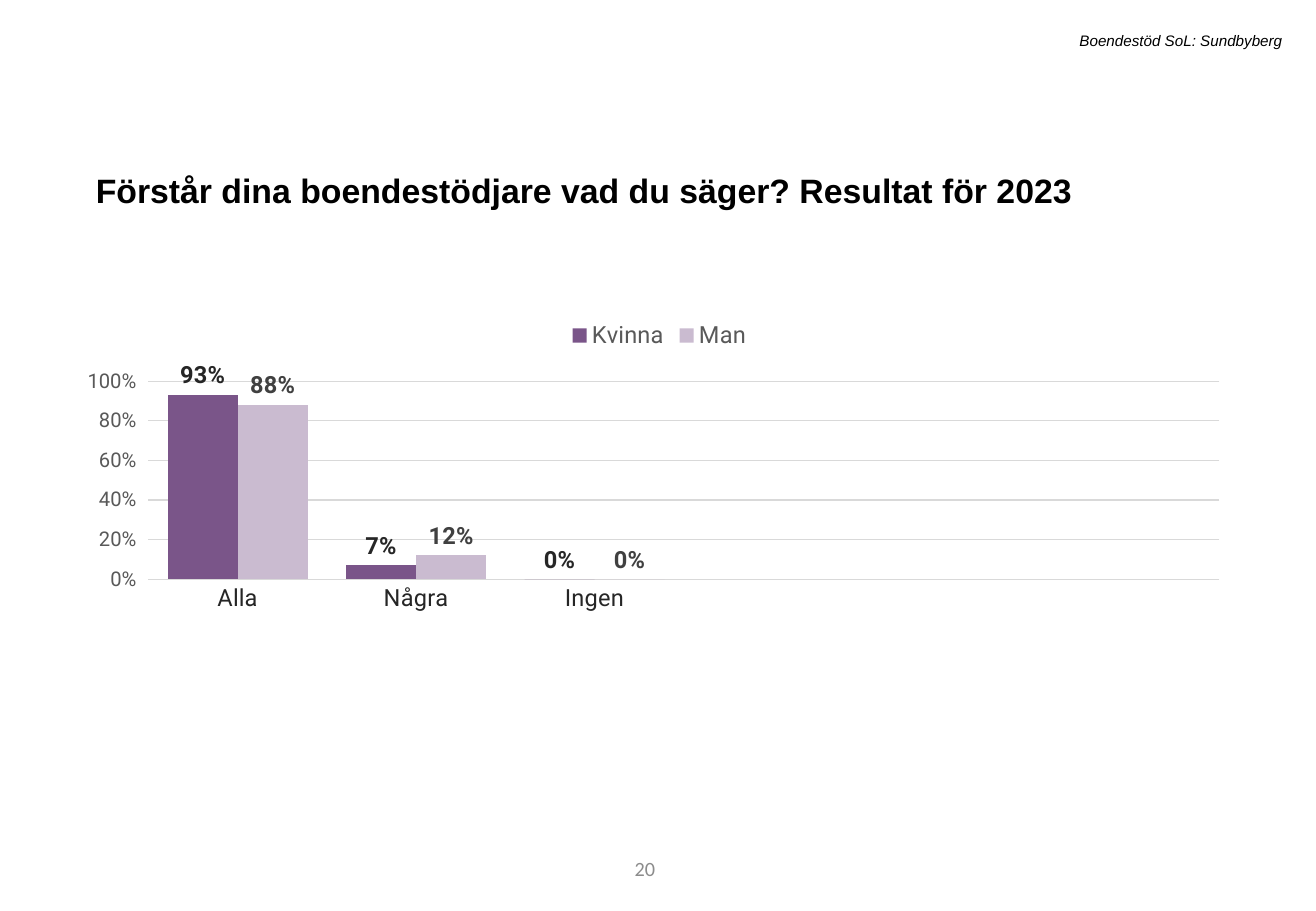
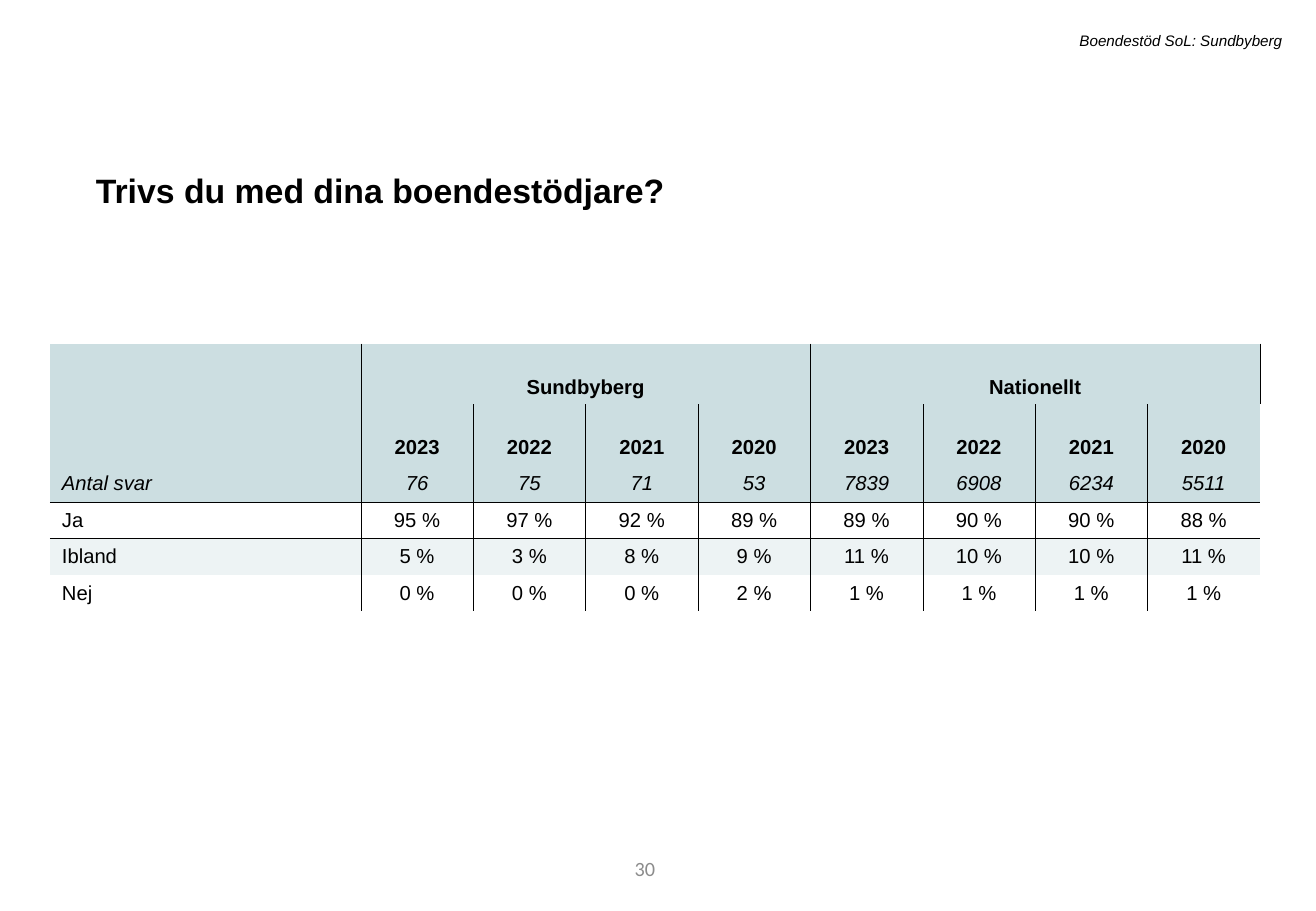
import pptx
import pptx.chart.data
import pptx.dml.color
import pptx.enum.chart
import pptx.enum.text
import pptx.oxml
import pptx.oxml.ns
import pptx.util

Inches = pptx.util.Inches
Pt = pptx.util.Pt
RGB = pptx.dml.color.RGBColor
ALIGN = pptx.enum.text.PP_ALIGN
ANCHOR = pptx.enum.text.MSO_ANCHOR
CHART = pptx.enum.chart

BLACK = RGB(0x00, 0x00, 0x00)
DARK = RGB(0x26, 0x26, 0x26)
SLATE = RGB(0x40, 0x40, 0x40)
GREY = RGB(0x59, 0x59, 0x59)
PALE = RGB(0x8C, 0x8C, 0x8C)
RULE = RGB(0xD9, 0xD9, 0xD9)
PLUM = RGB(0x7A, 0x55, 0x89)
LILAC = RGB(0xCA, 0xBB, 0xD0)
HEAD = RGB(0xCC, 0xDE, 0xE1)
BAND = RGB(0xED, 0xF3, 0xF4)
NS = pptx.oxml.ns.nsdecls


def style(font, size, color, name="Arial", bold=False, italic=False):
    font.name = name
    font.size = Pt(size)
    font.color.rgb = color
    font.bold = bold
    font.italic = italic


def add_text(slide, text, box, size, color, align, **look):
    """Add a one-line text box and return its frame."""
    frame = slide.shapes.add_textbox(*map(Inches, box)).text_frame
    frame.word_wrap = True
    par = frame.paragraphs[0]
    par.text = text
    par.alignment = align
    style(par.font, size, color, **look)
    return frame


deck = pptx.Presentation()
deck.slide_width = Inches(10.83)
deck.slide_height = Inches(7.5)

slides = []
for title, number in (
    ("Förstår dina boendestödjare vad du säger? Resultat för 2023", "20"),
    ("Trivs du med dina boendestödjare?", "30"),
):
    slide = deck.slides.add_slide(deck.slide_layouts[6])
    frame = add_text(slide, number, (3.05, 6.95, 2.44, 0.4), 12, PALE,
                     ALIGN.RIGHT, name="Calibri")
    frame.vertical_anchor = ANCHOR.MIDDLE
    frame = add_text(slide, title, (0.69, 1.28, 9.4, 0.47), 20, BLACK,
                     ALIGN.LEFT, bold=True)
    frame.paragraphs[0].line_spacing = 1.2
    frame.paragraphs[0].space_before = Pt(10)
    add_text(slide, "Boendestöd SoL: Sundbyberg", (1.79, 0.21, 8.86, 0.25),
             9, BLACK, ALIGN.RIGHT, italic=True)
    slides.append(slide)

# Slide 1: chart by gender
data = pptx.chart.data.CategoryChartData(number_format="0%")
data.categories = ["Alla", "Några", "Ingen", "", "", ""]
data.add_series("Kvinna", (0.93, 0.07, 0, None, None, None))
data.add_series("Man", (0.88, 0.12, 0, None, None, None))
chart = slides[0].shapes.add_chart(
    CHART.XL_CHART_TYPE.COLUMN_CLUSTERED, Inches(0.72), Inches(2.53),
    Inches(9.4), Inches(3.95), data).chart
style(chart.font, 10, BLACK, "Roboto")
chart.has_title = False
chart.has_legend = True
chart.legend.position = CHART.XL_LEGEND_POSITION.TOP
chart.legend.include_in_layout = False
style(chart.legend.font, 14, GREY, "Roboto")

cats = chart.category_axis
cats.major_tick_mark = CHART.XL_TICK_MARK.NONE
cats.format.line.color.rgb = RULE
cats.format.line.width = Pt(0.75)
style(cats.tick_labels.font, 14, DARK, "Roboto")

vals = chart.value_axis
vals.minimum_scale = 0
vals.maximum_scale = 1
vals.major_unit = 0.2
vals.major_tick_mark = CHART.XL_TICK_MARK.OUTSIDE
vals.format.line.fill.background()
vals.major_gridlines.format.line.color.rgb = RULE
vals.major_gridlines.format.line.width = Pt(0.75)
vals.tick_labels.number_format = "0%"
vals.tick_labels.number_format_is_linked = False
style(vals.tick_labels.font, 12, GREY, "Roboto")

plot = chart.plots[0]
plot.gap_width = 55
plot.overlap = 0
plot.vary_by_categories = False
for series, fill, ink in zip(plot.series, (PLUM, LILAC), (DARK, SLATE)):
    series.format.fill.solid()
    series.format.fill.fore_color.rgb = fill
    labels = series.data_labels
    labels.show_value = True
    labels.position = CHART.XL_LABEL_POSITION.OUTSIDE_END
    labels.number_format = "0%"
    labels.number_format_is_linked = False
    style(labels.font, 14, ink, "Roboto", bold=True)

area = chart._chartSpace.chart.plotArea
for old in area.findall(pptx.oxml.ns.qn("c:layout")):
    area.remove(old)
area.insert(0, pptx.oxml.parse_xml(
    f'<c:layout {NS("c")}><c:manualLayout><c:layoutTarget val="inner"/>'
    '<c:xMode val="edge"/><c:yMode val="edge"/><c:x val="0.05"/>'
    '<c:y val="0.154"/><c:w val="0.94"/><c:h val="0.413"/>'
    '</c:manualLayout></c:layout>'
    .replace('"0.05"', '"0.052"').replace('"0.94"', '"0.939"')))

# Slide 2: answers by year
rows = [
    ["", "Sundbyberg", "", "", "", "Nationellt", "", "", ""],
    ["", "2023", "2022", "2021", "2020", "2023", "2022", "2021", "2020"],
    ["Antal svar", "76", "75", "71", "53", "7839", "6908", "6234", "5511"],
    ["Ja", "95 %", "97 %", "92 %", "89 %", "89 %", "90 %", "90 %", "88 %"],
    ["Ibland", "5 %", "3 %", "8 %", "9 %", "11 %", "10 %", "10 %", "11 %"],
    ["Nej", "0 %", "0 %", "0 %", "2 %", "1 %", "1 %", "1 %", "1 %"],
]
fills = [HEAD, HEAD, HEAD, None, BAND, None]
table = slides[1].shapes.add_table(
    len(rows), 9, Inches(0.41), Inches(2.83), Inches(9.96), Inches(2.2)).table
table.first_row = False
table.horz_banding = False
# The built-in "No Style, No Grid" table style
table._tbl.tblPr.find(pptx.oxml.ns.qn("a:tableStyleId")).text = \
    "{2D5ABB26-0587-4C30-8999-92F81FD0307C}"
for col, column in enumerate(table.columns):
    column.width = Inches(0.925 if col else 2.56)
for start in (1, 5):
    table.cell(0, start).merge(table.cell(0, start + 3))

for row, texts in enumerate(rows):
    table.rows[row].height = Inches(0.5 if row < 2 else 0.3)
    for col, text in enumerate(texts):
        cell = table.cell(row, col)
        sides = {"L": col > 0, "R": col < 8, "T": row == 3, "B": row == 2}
        for side, drawn in sides.items():
            if drawn and not cell.is_spanned:
                cell._tc.get_or_add_tcPr().append(pptx.oxml.parse_xml(
                    f'<a:ln{side} {NS("a")} w="{Pt(0.25)}"><a:solidFill>'
                    f'<a:srgbClr val="{BLACK}"/></a:solidFill></a:ln{side}>'))
        if fills[row] is None:
            cell.fill.background()
        else:
            cell.fill.solid()
            cell.fill.fore_color.rgb = fills[row]
        cell.vertical_anchor = ANCHOR.BOTTOM if row < 2 else ANCHOR.MIDDLE
        par = cell.text_frame.paragraphs[0]
        par.text = text
        par.alignment = ALIGN.CENTER if col else ALIGN.LEFT
        style(par.font, 12, BLACK, bold=row < 2, italic=row == 2)

deck.save("out.pptx")
